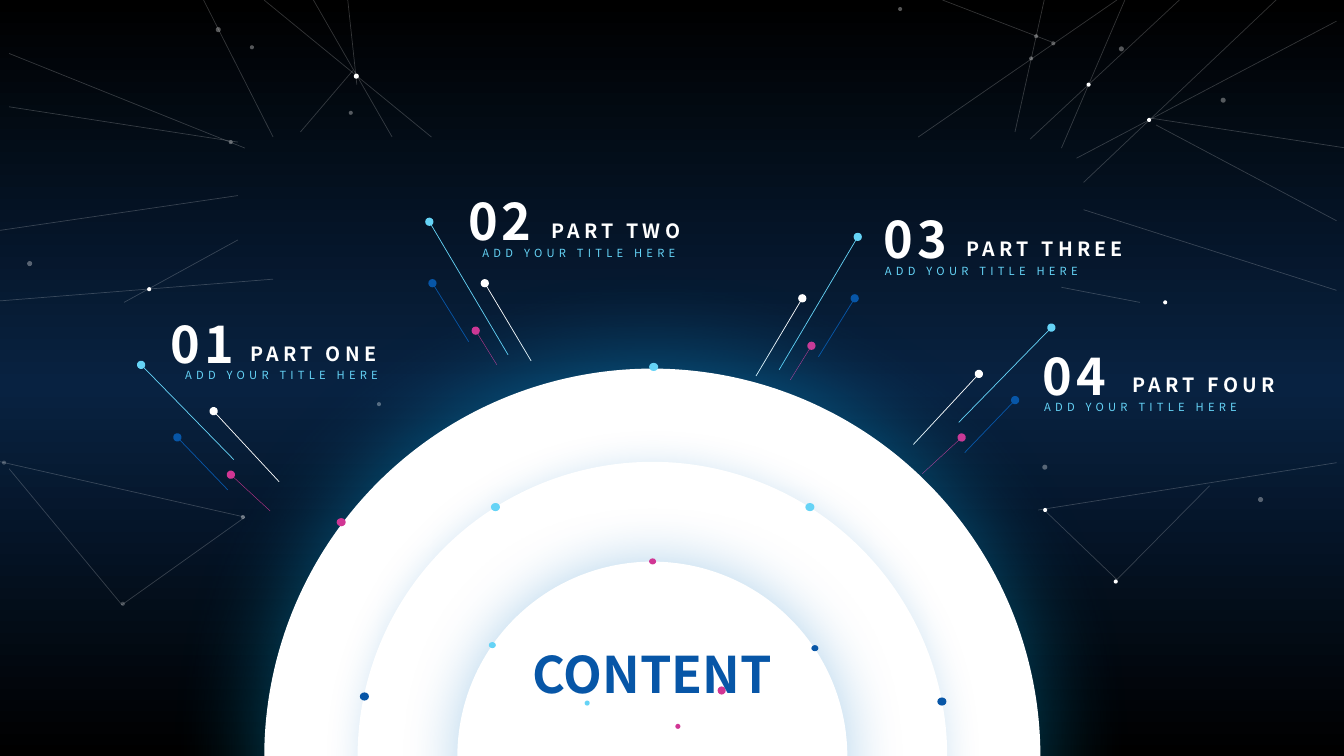
import copy
from dataclasses import dataclass

import lxml.etree
import pptx
import pptx.dml.color
import pptx.enum.shapes
import pptx.enum.text
import pptx.oxml.ns
import pptx.util

Pt = pptx.util.Pt
qn = pptx.oxml.ns.qn
ALIGN = pptx.enum.text.PP_ALIGN
FONT = "Noto Sans CJK SC"
COLORS = {"black": "000000", "navy": "082241", "white": "FFFFFF", "cyan": "65D3F6",
          "blue": "0756A7", "pink": "D13694", "star_glow": "5DFFF9",
          "sky_glow": "00B0F0", "ring_glow": "0070C0"}


@dataclass
class Line:
    x1: float
    y1: float
    x2: float
    y2: float
    color: str = "white"
    width: float = 0.5


@dataclass
class Glow:
    color: str
    alpha: int
    blur: float
    dist: float = 0
    angle: int = 0


@dataclass
class Dot:
    x: float
    y: float
    w: float
    h: float
    color: str = "white"
    alpha: int = 100
    glow: Glow | None = None


@dataclass
class Part:
    number: str
    title: str
    x: float
    y: float
    title_w: float
    caption_dx: float
    caption_w: float
    caption_align: ALIGN


STAR_GLOW = Glow("star_glow", 40, 23)
WEB = [Line(*ends) for ends in (
    (145.4, 0, 195.1, 97.9), (188.6, 0, 308.2, 97.9), (223.9, 0, 280.1, 97.9),
    (248.4, 0, 254.9, 60.5), (252, 50.4, 214.6, 94.3), (6.5, 38.2, 175, 105.8),
    (6.5, 76.3, 169.9, 101.5), (-7.2, 165.6, 169.9, 139.7), (-13.7, 216, 195.1, 199.4),
    (88.6, 216, 169.9, 171.4), (0, 329.8, 175, 369.4), (6.5, 334.8, 87.1, 432),
    (87.1, 432, 175, 369.4), (673.2, 0, 751.7, 30.2), (745.9, 0, 725, 94.3),
    (797.8, 0, 655.9, 97.9), (842.4, 0, 735.8, 99.4), (803.5, 0, 758.2, 105.8),
    (954.7, 15.1, 769, 113), (911.5, 0, 774, 130.3), (825.8, 89.3, 954.7, 157.7),
    (820.8, 84.2, 961.9, 105.8), (774, 149.8, 954.7, 207.4), (758.2, 205.2, 814.3, 216),
    (741.6, 364.3, 954.7, 330.5), (745.9, 364.3, 797.8, 414), (797.8, 414, 864, 347))]
STARS = [Dot(x, y, d, d, alpha=a, glow=STAR_GLOW) for x, y, d, a in (
    (254.5, 54.4, 3.6, 100), (250.6, 80.6, 2.9, 33), (180, 33.8, 2.9, 33),
    (155.9, 21.2, 3.6, 33), (21.2, 188.3, 3.6, 33), (164.9, 101.5, 2.9, 33),
    (106.6, 206.6, 2.9, 100), (270.7, 288.7, 2.9, 33), (173.5, 369.4, 2.9, 36),
    (2.9, 330.5, 2.9, 24), (87.8, 431.3, 2.9, 24), (801, 34.9, 3.6, 33),
    (643, 6.5, 2.9, 33), (740.2, 25.9, 2.9, 33), (752.4, 31, 2.9, 33),
    (736.6, 41.8, 2.9, 33), (777.6, 60.5, 2.9, 100), (820.8, 85.7, 2.9, 100),
    (873.7, 71.6, 3.6, 33), (832.3, 216, 2.9, 100), (746.3, 333.7, 3.6, 33),
    (900.4, 356.8, 3.6, 33), (797, 415.4, 2.9, 100), (746.6, 364.3, 2.9, 100))]
FLAT_RAYS = [Line(51.8, 33.1, 98.6, 83.5), Line(0, 0, 66.2, 67.7, "cyan"),
             Line(25.9, 51.8, 61.9, 89.3, "blue"), Line(64.1, 78.5, 92.2, 104.4, "pink", 0.25)]
STEEP_RAYS = [Line(39.6, 43.9, 72.7, 99.4), Line(0, 0, 56.2, 95, "cyan"),
              Line(2.2, 43.9, 28.1, 85.7, "blue"), Line(33.1, 77.8, 48.2, 102.2, "pink", 0.25)]
FANS = [(FLAT_RAYS, 100.8, 260.6, 1), (STEEP_RAYS, 306.7, 158.4, 1),
        (STEEP_RAYS, 612.7, 169.2, -1), (FLAT_RAYS, 751, 234, -1)]
PARTS = [Part("01", "PART ONE", 109.4, 220.3, 118.1, 3.6, 176.4, ALIGN.CENTER),
         Part("02", "PART TWO", 321.8, 132.5, 125.3, 3.6, 176.4, ALIGN.CENTER),
         Part("03", "PART THREE", 618.5, 145.4, 144.7, 6.5, 191.5, ALIGN.JUSTIFY),
         Part("04", "PART FOUR", 732.2, 242.6, 144.7, 6.5, 191.5, ALIGN.JUSTIFY)]
RINGS = [Dot(466, 540.5, d, d, glow=glow) for d, glow in (
    (554.4, Glow("sky_glow", 40, 71, 3, 270)), (421.2, Glow("ring_glow", 17, 25)),
    (278.6, Glow("ring_glow", 31, 42)))]
BEADS = [Dot(x, y, w, h, color) for w, h, places in (
    (5, 4.3, ((351.7, 460.8, "cyan"), (466.2, 401, "pink"), (582.1, 463, "blue"))),
    (5.8, 5.8, ((515.5, 493.2, "pink"),)),
    (3.6, 3.6, ((484.2, 518.8, "pink"), (419.4, 502.2, "cyan"))),
    (6.5, 5.8, ((353.9, 362.2, "cyan"), (260.3, 497.5, "blue"), (578.5, 362.2, "cyan"),
                (672.8, 501.1, "blue"), (243.7, 373, "pink"), (466.9, 262.1, "cyan"))),
) for x, y, color in places]


def rgb(name: str) -> pptx.dml.color.RGBColor:
    return pptx.dml.color.RGBColor.from_string(COLORS[name])


def set_alpha(shape, percent: int) -> None:
    clr = shape.element.xpath(".//a:srgbClr")[0]
    lxml.etree.SubElement(clr, qn("a:alpha"), val=str(percent * 1000))


def add_line(s, line: Line, *, alpha: int = 100, oval: bool = False) -> None:
    c = s.shapes.add_connector(pptx.enum.shapes.MSO_CONNECTOR.STRAIGHT,
                               Pt(line.x1), Pt(line.y1), Pt(line.x2), Pt(line.y2))
    c.line.color.rgb = rgb(line.color)
    c.line.width = Pt(line.width)
    if alpha < 100:
        set_alpha(c, alpha)
    if oval:
        lxml.etree.SubElement(c.element.spPr.find(qn("a:ln")), qn("a:headEnd"), type="oval")
    lxml.etree.SubElement(c.element.spPr, qn("a:effectLst"))


def add_dot(s, dot: Dot) -> None:
    sp = s.shapes.add_shape(pptx.enum.shapes.MSO_SHAPE.OVAL, Pt(dot.x - dot.w / 2),
                            Pt(dot.y - dot.h / 2), Pt(dot.w), Pt(dot.h))
    sp.fill.solid()
    sp.fill.fore_color.rgb = rgb(dot.color)
    sp.line.fill.background()
    sp.shadow.inherit = False
    if dot.alpha < 100:
        set_alpha(sp, dot.alpha)
    if dot.glow:
        glow = dot.glow
        shadow = lxml.etree.SubElement(
            sp.element.spPr.find(qn("a:effectLst")), qn("a:outerShdw"),
            blurRad=str(Pt(glow.blur)), dist=str(Pt(glow.dist)),
            dir=str(glow.angle * 60000), algn="ctr", rotWithShape="0")
        clr = lxml.etree.SubElement(shadow, qn("a:srgbClr"), val=COLORS[glow.color])
        lxml.etree.SubElement(clr, qn("a:alpha"), val=str(glow.alpha * 1000))


def write(sp, text: str, *, x: float, y: float, w: float, h: float, size: float,
          color: str = "white", bold: bool = False, spacing: int = 0,
          align: ALIGN = ALIGN.CENTER) -> None:
    sp.left, sp.top, sp.width, sp.height = Pt(x), Pt(y), Pt(w), Pt(h)
    tf = sp.text_frame
    tf.word_wrap = True
    tf.auto_size = pptx.enum.text.MSO_AUTO_SIZE.NONE
    tf.vertical_anchor = pptx.enum.text.MSO_ANCHOR.MIDDLE
    p = tf.paragraphs[0]
    p.alignment = align
    r = p.add_run()
    r.text = text
    r.font.name, r.font.size, r.font.bold = FONT, Pt(size), bold
    r.font.color.rgb = rgb(color)
    rPr = r.font._element
    rPr.set("spc", str(spacing * 100))
    lxml.etree.SubElement(rPr, qn("a:ea"), typeface=FONT)


def add_part(s, part: Part) -> None:
    def box():
        return s.shapes.add_textbox(0, 0, Pt(10), Pt(10))

    write(box(), part.number, x=part.x, y=part.y, w=70.6, h=50.4, size=36, bold=True, spacing=3)
    write(box(), "ADD YOUR TITLE HERE", x=part.x + part.caption_dx, y=part.y + 39.6,
          w=part.caption_w, h=16.6, size=8, color="cyan", spacing=3, align=part.caption_align)
    write(box(), part.title, x=part.x + 55.4, y=part.y + 20.2, w=part.title_w, h=23.8,
          size=14, bold=True, spacing=3)


def paint_background(s) -> None:
    fill = s.background.fill
    fill.gradient()
    fill.gradient_angle = 270
    first = s.element.xpath(".//p:bg//a:gs")[0]
    first.addnext(copy.deepcopy(first))
    for stop, (pos, color) in zip(fill.gradient_stops,
                                  ((0, "black"), (0.51, "navy"), (1, "black"))):
        stop.position = pos
        stop.color.rgb = rgb(color)


def main() -> None:
    prs = pptx.Presentation()
    prs.slide_width, prs.slide_height = Pt(960), Pt(540)
    s = prs.slides.add_slide(prs.slide_layouts[5])
    paint_background(s)
    for line in WEB:
        add_line(s, line, alpha=20)
    for star in STARS:
        add_dot(s, star)
    for rays, x, y, side in FANS:
        for ray in rays:
            add_line(s, Line(x + side * ray.x1, y + ray.y1, x + side * ray.x2, y + ray.y2,
                             ray.color, ray.width), oval=True)
    for part in PARTS:
        add_part(s, part)
    for dot in RINGS + BEADS:
        add_dot(s, dot)
    title = s.shapes.title
    write(title, "CONTENT", x=358.6, y=455.8, w=214.6, h=50.4, size=36, color="blue", bold=True)
    title.element.getparent().append(title.element)
    prs.save("out.pptx")


if __name__ == "__main__":
    main()
